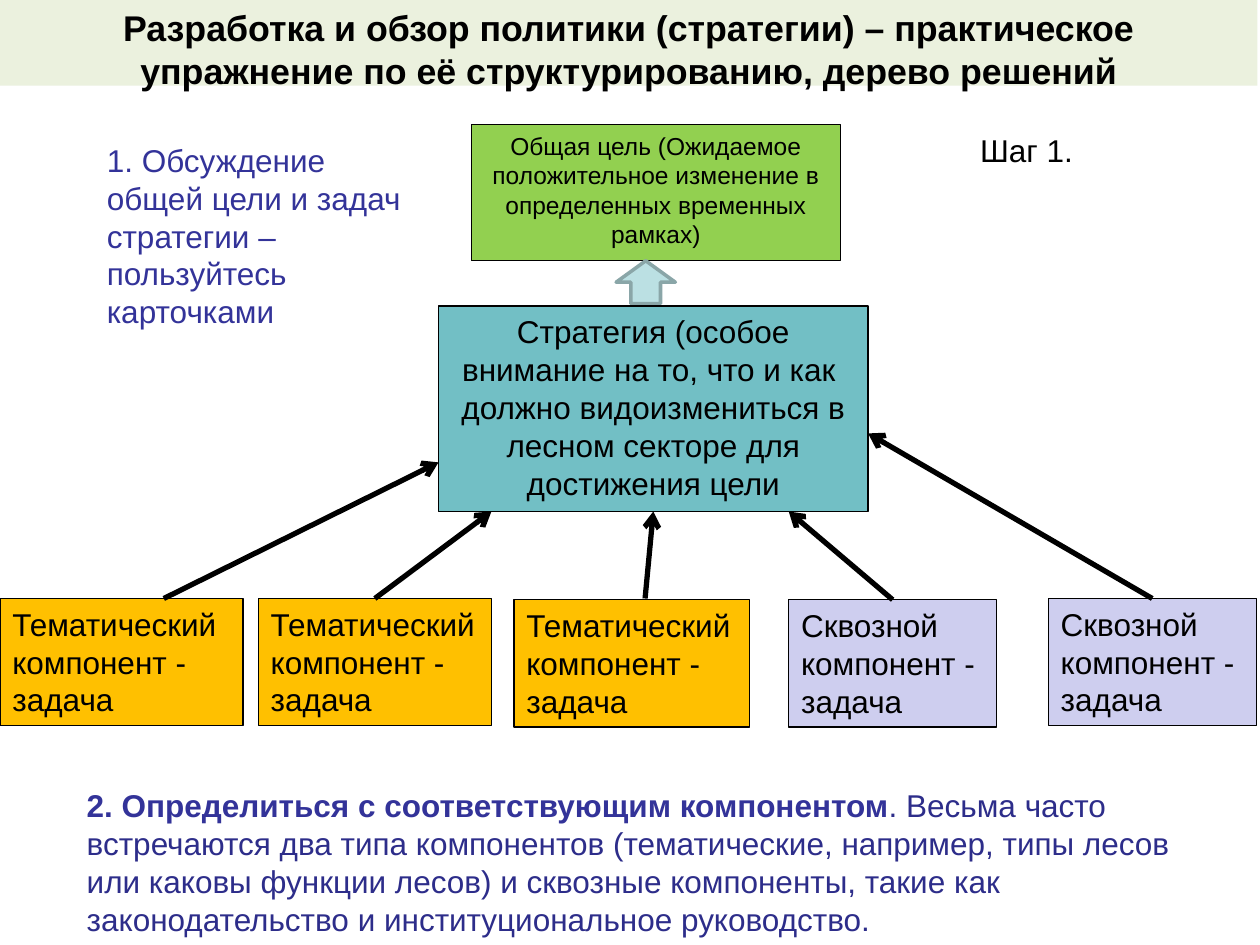
from lxml.etree import SubElement
from pptx import Presentation
from pptx.dml.color import RGBColor
from pptx.enum.shapes import MSO_CONNECTOR, MSO_SHAPE
from pptx.enum.text import MSO_ANCHOR, MSO_AUTO_SIZE, PP_ALIGN
from pptx.oxml.ns import qn
from pptx.util import Inches, Pt

HUES = {
    "black": "000000", "pale": "EBF1DE", "green": "92D050", "teal": "72BFC5",
    "gold": "FFC000", "lilac": "CECEEF", "ice": "BBE0E3", "steel": "8AA6A8",
    "blue": "333399", "navy": "2D2D8A",
}
COLS, ROWS = 100, 75
WIDE, HIGH = Inches(10), Inches(7.5)


def hue(name):
    return RGBColor.from_string(HUES[name])


def write(shape, *runs, size=18, color="black", bold=False, center=False, grow=False):
    frame = shape.text_frame
    frame.word_wrap = True
    frame.vertical_anchor = MSO_ANCHOR.TOP
    frame.auto_size = MSO_AUTO_SIZE.SHAPE_TO_FIT_TEXT if grow else MSO_AUTO_SIZE.NONE
    para = frame.paragraphs[0]
    para.alignment = PP_ALIGN.CENTER if center else PP_ALIGN.LEFT
    for item in runs:
        text, look = item if isinstance(item, tuple) else (item, {})
        run = para.add_run()
        run.text = text
        run.font.name = "Arial"
        run.font.size = Pt(size)
        run.font.bold = look.get("bold", bold)
        run.font.color.rgb = hue(look.get("color", color))


class Board:
    """Draws styled elements on one slide, measured in grid columns and rows."""

    def __init__(self, slide):
        self.shapes = slide.shapes

    def place(self, *area):
        units = (WIDE / COLS, HIGH / ROWS) * 2
        return [round(part * unit) for part, unit in zip(area, units)]

    def box(self, area, fill, *runs, kind=MSO_SHAPE.RECTANGLE, line="black", width=0.75, **form):
        shape = self.shapes.add_shape(kind, *self.place(*area))
        shape.shadow.inherit = False
        shape.fill.solid()
        shape.fill.fore_color.rgb = hue(fill)
        if line:
            shape.line.color.rgb = hue(line)
            shape.line.width = Pt(width)
        else:
            shape.line.fill.background()
        if runs:
            write(shape, *runs, **form)
        return shape

    def note(self, area, *runs, **form):
        write(self.shapes.add_textbox(*self.place(*area)), *runs, grow=True, **form)

    def arrow(self, start, end, tail=None, head=None):
        line = self.shapes.add_connector(MSO_CONNECTOR.STRAIGHT, *self.place(*start, *end))
        line.line.color.rgb = hue("black")
        line.line.width = Pt(3)
        SubElement(line.line._get_or_add_ln(), qn("a:tailEnd"), type="arrow")
        SubElement(line._element.spPr, qn("a:effectLst"))
        if tail:
            line.begin_connect(tail, 0)
        if head:
            line.end_connect(head, 2)


def main():
    deck = Presentation()
    deck.slide_width, deck.slide_height = WIDE, HIGH
    board = Board(deck.slides.add_slide(deck.slide_layouts[6]))

    board.box((37.4, 9.9, 29.3, 10.8), "green",
              "Общая цель (Ожидаемое положительное изменение в определенных временных рамках)",
              size=14, center=True)
    board.box((48.9, 20.7, 4.7, 3.4), "ice", kind=MSO_SHAPE.UP_ARROW, line="steel", width=2)
    board.box((0, 0, 99.8, 6.8), "pale",
              "Разработка и обзор политики (стратегии) – практическое упражнение "
              "по её структурированию, дерево решений",
              line=None, size=20.4, bold=True, center=True)
    plan = board.box((34.8, 24.3, 34.1, 16.3), "teal",
                     "Стратегия (особое внимание на то, что и как  должно видоизмениться "
                     "в лесном секторе для достижения цели", center=True)

    theme, cross = ("gold", "Тематический"), ("lilac", "Сквозной")
    parts = [
        (0, 47.5, 19.3, theme, 13, (34.8, 36.7)),
        (20.5, 47.5, 18.5, theme, None, (39, 40.6)),
        (40.8, 47.6, 18.7, theme, 51.2, None),
        (62.6, 47.6, 16.5, cross, None, (62.6, 40.6)),
        (83.2, 47.5, 16.5, cross, None, (68.9, 34.4)),
    ]
    for left, top, width, (fill, word), start, end in parts:
        part = board.box((left, top, width, 10.1), fill, f"{word} компонент - задача", grow=True)
        board.arrow((start or left + width / 2, 47.5), end or (51.85, 40.6),
                    tail=None if start else part, head=None if end else plan)

    board.note((7.5, 10.7, 26, 16.2),
               "1. Обсуждение общей цели и задач стратегии – пользуйтесь карточками", color="blue")
    board.note((76.8, 9.9, 18.1, 4), "Шаг 1.")
    board.note((5.9, 61.9, 89, 13.1),
               ("2. Определиться с соответствующим компонентом", {"bold": True, "color": "blue"}),
               ". Весьма часто встречаются два типа компонентов (тематические, например, "
               "типы лесов или каковы функции лесов) и сквозные компоненты, такие как "
               "законодательство и институциональное руководство.", color="navy")
    deck.save("out.pptx")


if __name__ == "__main__":
    main()
